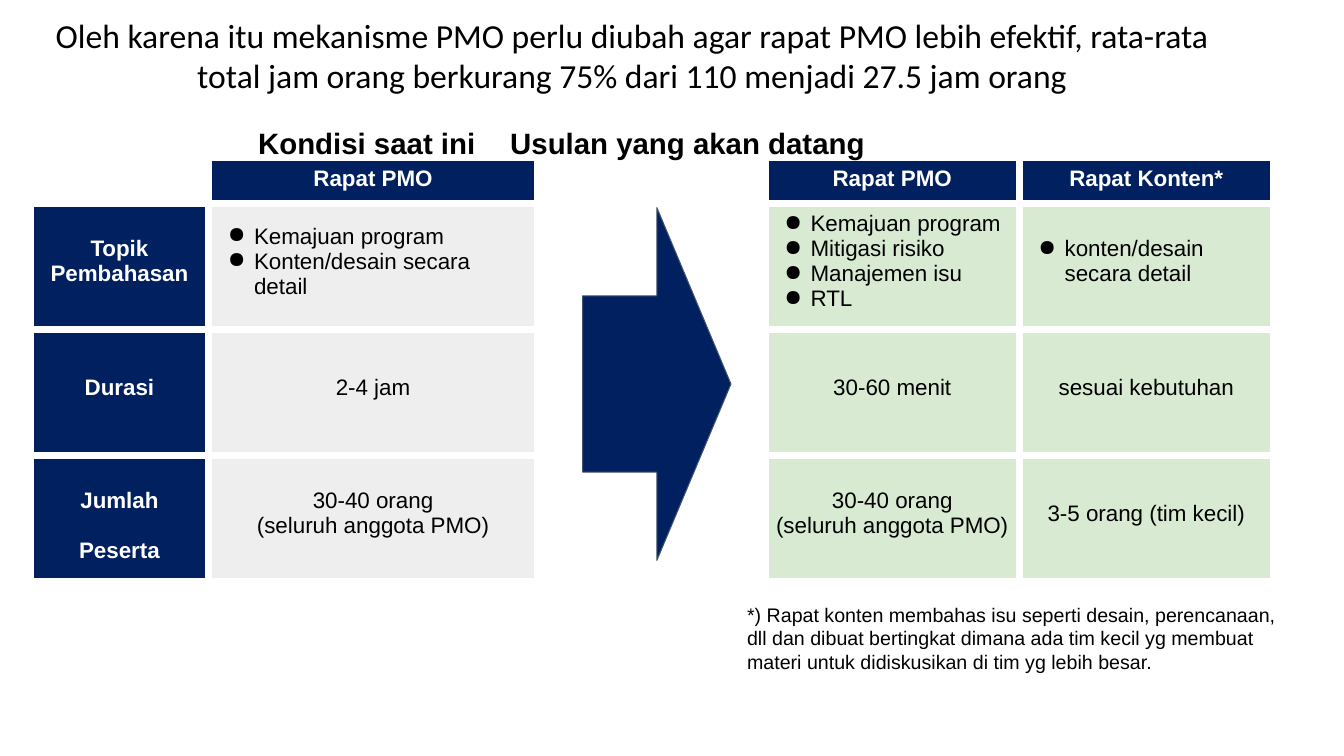
"""Build a slide comparing the current PMO meeting with the proposed one."""
from lxml import etree
from pptx import Presentation
from pptx.dml.color import RGBColor
from pptx.enum.shapes import MSO_SHAPE
from pptx.enum.text import MSO_ANCHOR, PP_ALIGN
from pptx.oxml.ns import qn
from pptx.util import Inches, Pt

TITLE = ("Oleh karena itu mekanisme PMO perlu diubah agar rapat PMO lebih efektif, "
         "rata-rata total jam orang berkurang 75% dari 110 menjadi 27.5 jam orang")
CONDITIONS = "Kondisi saat ini\tUsulan yang akan datang"
FOOTNOTE = ("*) Rapat konten membahas isu seperti desain, perencanaan,\v"
            "dll dan dibuat bertingkat dimana ada tim kecil yg membuat\v"
            "materi untuk didiskusikan di tim yg lebih besar.")
MEETINGS = [
    ["", "Rapat PMO", "", "Rapat PMO", "Rapat Konten*"],
    ["Topik\vPembahasan",
     ["Kemajuan program", "Konten/desain secara\vdetail"], "",
     ["Kemajuan program", "Mitigasi risiko", "Manajemen isu", "RTL"],
     ["konten/desain\vsecara detail"]],
    ["Durasi", "2-4 jam", "", "30-60 menit", "sesuai kebutuhan"],
    ["Jumlah\nPeserta", "30-40 orang\v(seluruh anggota PMO)", "",
     "30-40 orang\v(seluruh anggota PMO)", "3-5 orang (tim kecil)"],
]
COLORS = {"navy": "002060", "current": "EEEEEE", "proposed": "D9EAD3",
          "white": "FFFFFF", "black": "000000", "outline": "44546A"}
COLUMN_WIDTHS = [1.77, 3.26, 2.26, 2.52, 2.52]
ROW_HEIGHTS = [0.46, 1.25, 1.25, 1.25]
TABLE_LEFT, TABLE_TOP = 0.3, 1.56
BORDER = 6


def rgb(name):
    return RGBColor.from_string(COLORS[name])


def write(frame, text, size=16, font="Arial", color="black", bold=False,
          align=PP_ALIGN.LEFT, bullets=False, gap=0, spacing=None):
    lines = text if isinstance(text, list) else text.split("\n")
    for index, line in enumerate(lines):
        paragraph = frame.add_paragraph() if index else frame.paragraphs[0]
        paragraph.text = line
        paragraph.alignment = align
        paragraph.space_before = Pt(gap if index else 0)
        if spacing:
            paragraph.line_spacing = Pt(spacing)
        for run in paragraph.runs:
            run.font.size, run.font.name, run.font.bold = Pt(size), font, bold
            run.font.color.rgb = rgb(color)
        if bullets:
            properties = paragraph._p.get_or_add_pPr()
            properties.set("marL", str(Inches(0.45)))
            properties.set("indent", str(Inches(-0.26)))
            etree.SubElement(properties, qn("a:buChar"), char="●")


def set_margins(target, top=0, bottom=0):
    target.margin_left = target.margin_right = 0
    target.margin_top, target.margin_bottom = Inches(top), Inches(bottom)


def add_borders(cell):
    properties = cell._tc.get_or_add_tcPr()
    for side in ("a:lnL", "a:lnR", "a:lnT", "a:lnB"):
        border = etree.SubElement(properties, qn(side), w=str(Pt(BORDER)))
        fill = etree.SubElement(border, qn("a:solidFill"))
        etree.SubElement(fill, qn("a:srgbClr"), val=COLORS["white"])


def add_meetings(slide):
    frame = slide.shapes.add_table(
        len(ROW_HEIGHTS), len(COLUMN_WIDTHS), Inches(TABLE_LEFT), Inches(TABLE_TOP),
        Inches(sum(COLUMN_WIDTHS)), Inches(sum(ROW_HEIGHTS)))
    table = frame.table
    table.first_row = table.horz_banding = False
    for column, width in zip(table.columns, COLUMN_WIDTHS):
        column.width = Inches(width)
    for row, height in zip(table.rows, ROW_HEIGHTS):
        row.height = Inches(height)
    for r, entries in enumerate(MEETINGS):
        for c, entry in enumerate(entries):
            cell = table.cell(r, c)
            add_borders(cell)
            if not entry:
                cell.fill.background()
                continue
            heading = r == 0 or c == 0
            background = "navy" if heading else "current" if c == 1 else "proposed"
            cell.fill.solid()
            cell.fill.fore_color.rgb = rgb(background)
            cell.vertical_anchor = MSO_ANCHOR.MIDDLE
            set_margins(cell, top=0.24 if "\n" in entry else 0,
                        bottom=0.1 if r else 0.04)
            listed = isinstance(entry, list)
            write(cell.text_frame, entry, color="white" if heading else "black",
                  bold=heading, bullets=listed, gap=0 if listed else 18,
                  align=PP_ALIGN.LEFT if listed else PP_ALIGN.CENTER)


def add_label(slide, text, left, top, width, height, wrap=True, **style):
    box = slide.shapes.add_textbox(*map(Inches, (left, top, width, height)))
    set_margins(box.text_frame, top=0.02)
    box.text_frame.word_wrap = wrap
    write(box.text_frame, text, **style)


def main():
    deck = Presentation()
    deck.slide_width, deck.slide_height = Inches(13.33), Inches(7.5)
    slide = deck.slides.add_slide(deck.slide_layouts[5])

    title = slide.shapes.title
    title.left, title.top, title.width, title.height = map(
        Inches, (0.34, 0.12, 11.86, 0.82))
    set_margins(title.text_frame, top=0.03)
    title.text_frame.vertical_anchor = MSO_ANCHOR.MIDDLE
    write(title.text_frame, TITLE, size=24, font="Calibri",
          align=PP_ALIGN.CENTER, spacing=28.5)

    add_meetings(slide)
    add_label(slide, CONDITIONS, 2.56, 1.22, 9.12, 0.38, size=21, bold=True)

    arrow = slide.shapes.add_shape(
        MSO_SHAPE.RIGHT_ARROW, *map(Inches, (5.78, 2.06, 1.47, 3.5)))
    arrow.shadow.inherit = False
    arrow.fill.solid()
    arrow.fill.fore_color.rgb = rgb("navy")
    arrow.line.color.rgb = rgb("outline")
    arrow.line.width = Pt(0.75)

    add_label(slide, FOOTNOTE, 7.41, 5.96, 5.26, 0.73, wrap=False, size=14)
    deck.save("out.pptx")


if __name__ == "__main__":
    main()
